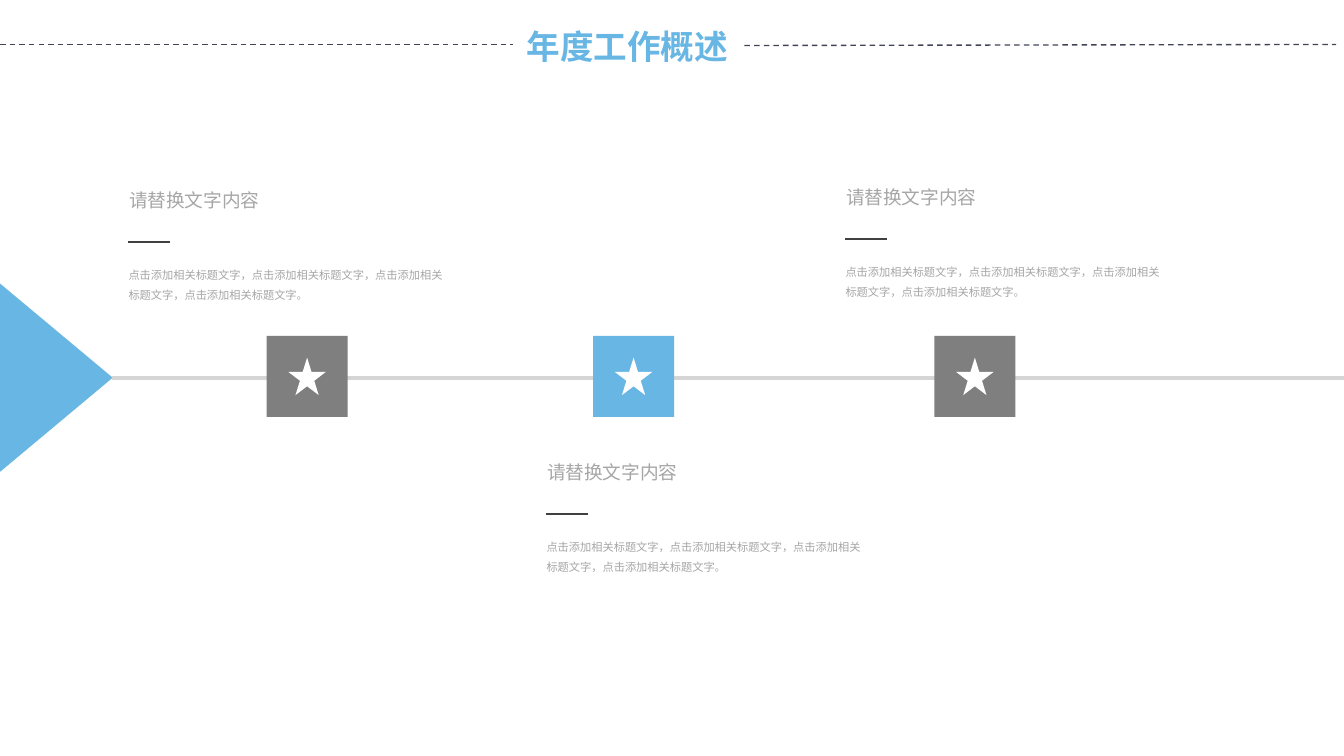
import pptx
import pptx.dml.color
import pptx.enum.dml
import pptx.enum.shapes
import pptx.enum.text
import pptx.oxml.ns
import pptx.util
from lxml import etree

Cm = pptx.util.Cm
Pt = pptx.util.Pt
SHAPE = pptx.enum.shapes.MSO_SHAPE

BLUE, GRAY, WHITE = "68B6E4", "7F7F7F", "FFFFFF"
TEXT_GRAY, RULE_DARK, AXIS_GRAY, DASH_DARK = "A6A6A6", "404040", "D5D5D5", "414455"
HEADING = "请替换文字内容"
BODY = "，".join(["点击添加相关标题文字"] * 4) + "。"


def rgb(hex_color):
    """Return the colour of a hex string."""
    return pptx.dml.color.RGBColor.from_string(hex_color)


def add_line(shapes, start, end, color, weight, dashed=False):
    """Draw a straight line between two points in centimetres."""
    line = shapes.add_connector(
        pptx.enum.shapes.MSO_CONNECTOR.STRAIGHT, *map(Cm, (*start, *end)))
    line.line.color.rgb = rgb(color)
    line.line.width = Pt(weight)
    if dashed:
        line.line.dash_style = pptx.enum.dml.MSO_LINE.DASH
    etree.SubElement(line._element.spPr, pptx.oxml.ns.qn("a:effectLst"))


def add_solid(shapes, kind, left, top, width, height, color):
    """Add a preset shape with a plain fill and no outline."""
    solid = shapes.add_shape(kind, *map(Cm, (left, top, width, height)))
    solid.shadow.inherit = False
    solid.fill.solid()
    solid.fill.fore_color.rgb = rgb(color)
    solid.line.fill.background()
    return solid


def add_text(shapes, box, words, size, font, color, bold=None, wrap=False, spacing=None):
    """Add a one-run text box that grows with its text."""
    frame = shapes.add_textbox(*map(Cm, box)).text_frame
    frame.word_wrap = wrap
    frame.auto_size = pptx.enum.text.MSO_AUTO_SIZE.SHAPE_TO_FIT_TEXT
    paragraph = frame.paragraphs[0]
    paragraph.line_spacing = spacing
    run = paragraph.add_run()
    run.text = words
    run.font.size = Pt(size)
    run.font.bold = bold
    run.font.color.rgb = rgb(color)
    run.font.name = font
    east_asian = etree.SubElement(run.font._element, pptx.oxml.ns.qn("a:ea"))
    east_asian.set("typeface", font)


def add_header(shapes, left, top, width):
    """Place the slide title between two dashed lines."""
    title_left, title_width = left + 9.7, 4.37
    title_right = title_left + title_width
    add_line(shapes, (left, top + 0.48), (title_left, top + 0.48), DASH_DARK, 0.75, True)
    add_line(shapes, (title_right, top + 0.5), (left + width - 0.15, top + 0.48),
             DASH_DARK, 0.75, True)
    add_text(shapes, (title_left, top, title_width, 1.02), "年度工作概述", 18,
             "Noto Sans CJK SC", BLUE, bold=True)


def add_axis(shapes, left, top, width, height):
    """Place the blue pointer and the timeline that leaves its tip."""
    pointer_depth = 2.13
    middle = top + height / 2
    pointer = add_solid(shapes, SHAPE.ISOSCELES_TRIANGLE,
                        left + (pointer_depth - height) / 2, middle - pointer_depth / 2,
                        height, pointer_depth, BLUE)
    pointer.rotation = 90
    add_line(shapes, (left + pointer_depth - 0.02, middle), (left + width, middle),
             AXIS_GRAY, 2)


def add_milestone(shapes, left, top, size, color):
    """Place a square with a white star in its middle."""
    milestone = shapes.add_group_shape().shapes
    star = 0.71
    inset = (size - star) / 2
    add_solid(milestone, SHAPE.RECTANGLE, left, top, size, size, color)
    add_solid(milestone, SHAPE.STAR_5_POINT, left + inset, top + inset, star, star, WHITE)


def add_description(shapes, left, top, width):
    """Place a heading, a short rule and body text."""
    description = shapes.add_group_shape().shapes
    add_text(description, (left, top + 1.37, width, 1.02), BODY, 6, "Arial", TEXT_GRAY,
             wrap=True, spacing=1.5)
    add_line(description, (left + 0.24, top + 1.13), (left + 1.04, top + 1.13),
             RULE_DARK, 1)
    add_text(description, (left + 0.01, top, 3, 0.68), HEADING, 10, "Arial", TEXT_GRAY)


def main():
    """Build the annual work overview slide."""
    presentation = pptx.Presentation()
    presentation.slide_width, presentation.slide_height = Cm(25.4), Cm(14.29)
    shapes = presentation.slides.add_slide(presentation.slide_layouts[6]).shapes
    add_header(shapes, 0, 0.36, 25.4)
    add_axis(shapes, 0, 5.36, 25.4, 3.56)
    for left, color in ((5.04, GRAY), (11.21, BLUE), (17.66, GRAY)):
        add_milestone(shapes, left, 6.35, 1.53, color)
    for left, top in ((2.18, 3.45), (10.08, 8.59), (15.73, 3.39)):
        add_description(shapes, left, top, 6.46)
    presentation.save("out.pptx")


if __name__ == "__main__":
    main()
